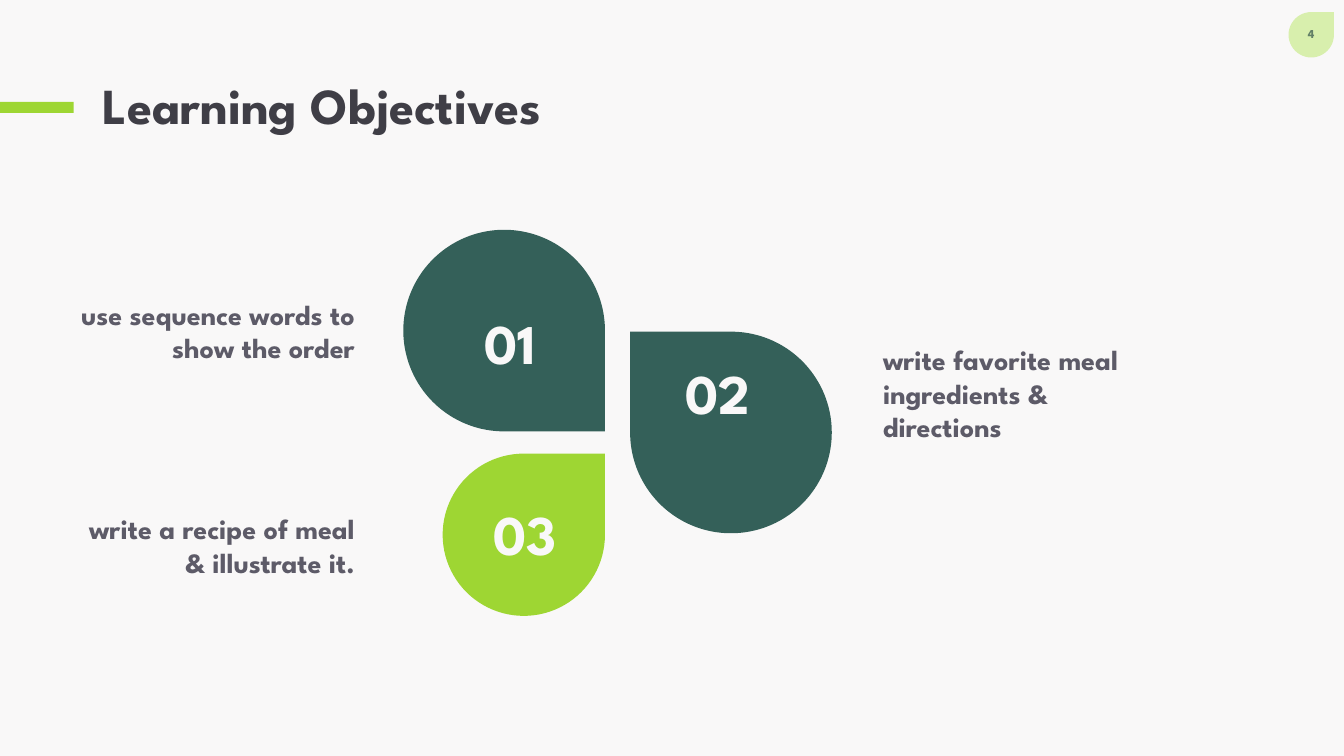
from lxml import etree
from pptx import Presentation
from pptx.dml.color import RGBColor
from pptx.enum.shapes import MSO_SHAPE
from pptx.enum.text import MSO_ANCHOR, PP_ALIGN
from pptx.oxml.ns import qn
from pptx.util import Inches, Pt

DROP, RECT = MSO_SHAPE.TEAR, MSO_SHAPE.RECTANGLE
LEFT, MID, RIGHT = PP_ALIGN.LEFT, PP_ALIGN.CENTER, PP_ALIGN.RIGHT
FONT = "League Spartan"
COLORS = {
    "back": "F9F8F8",
    "pale": "D8EFAD",
    "lime": "9ED633",
    "teal": "346059",
    "page": "274843",
    "title": "3F3E46",
    "body": "5D5B68",
}

deck = Presentation()
deck.slide_width, deck.slide_height = Inches(13.33), Inches(7.5)
slide = deck.slides.add_slide(deck.slide_layouts[6])
slide.background.fill.solid()
slide.background.fill.fore_color.rgb = RGBColor.from_string(COLORS["back"])


def add_block(kind, box, color, turn=0):
    shape = slide.shapes.add_shape(kind, *map(Inches, box))
    shape.shadow.inherit = False
    shape.fill.solid()
    shape.fill.fore_color.rgb = RGBColor.from_string(COLORS[color])
    shape.line.fill.background()
    shape.rotation = turn


def add_text(text, box, size, color, align):
    frame = slide.shapes.add_textbox(*map(Inches, box)).text_frame
    frame.word_wrap = True
    para = frame.paragraphs[0]
    para.text = text
    para.alignment = align
    para.font.name = FONT
    para.font.size = Pt(size)
    para.font.bold = True
    para.font.color.rgb = RGBColor.from_string(COLORS[color])
    return frame


add_block(DROP, (12.78, 0.12, 0.45, 0.45), "pale")
page = add_text("4", (12.78, 0.21, 0.45, 0.27), 9, "page", MID)
tint = page.paragraphs[0]._p.find(".//" + qn("a:srgbClr"))
etree.SubElement(tint, qn("a:alpha")).set("val", "65000")

add_block(RECT, (0, 1.01, 0.73, 0.11), "lime")
title = add_text("Learning Objectives", (0.92, 0.4, 9.9, 1.34), 36, "title", LEFT)
title.vertical_anchor = MSO_ANCHOR.MIDDLE
title.paragraphs[0].line_spacing = 0.9

drops = [
    ("01", 4, 2.28, 2, "teal", 90, 4.54, 3.01),
    ("02", 6.25, 3.29, 2, "teal", 270, 6.67, 3.51),
    ("03", 4.39, 4.5, 1.61, "lime", 0, 4.75, 4.91),
]
for num, x, y, side, color, turn, num_x, num_y in drops:
    add_block(DROP, (x, y, side, side), color, turn)
    add_text(num, (num_x, num_y, 0.87, 0.77), 40, "back", RIGHT)

goals = [
    ("use sequence words to show the order", 0.66, 2.9, 1.11, RIGHT),
    ("write favorite meal ingredients & directions", 8.66, 3.35, 1.11, LEFT),
    ("write a recipe of meal & illustrate it.", 0.66, 5.03, 0.77, RIGHT),
]
for text, x, y, high, align in goals:
    add_text(text, (x, y, 2.96, high), 20, "body", align)

deck.save("out.pptx")
